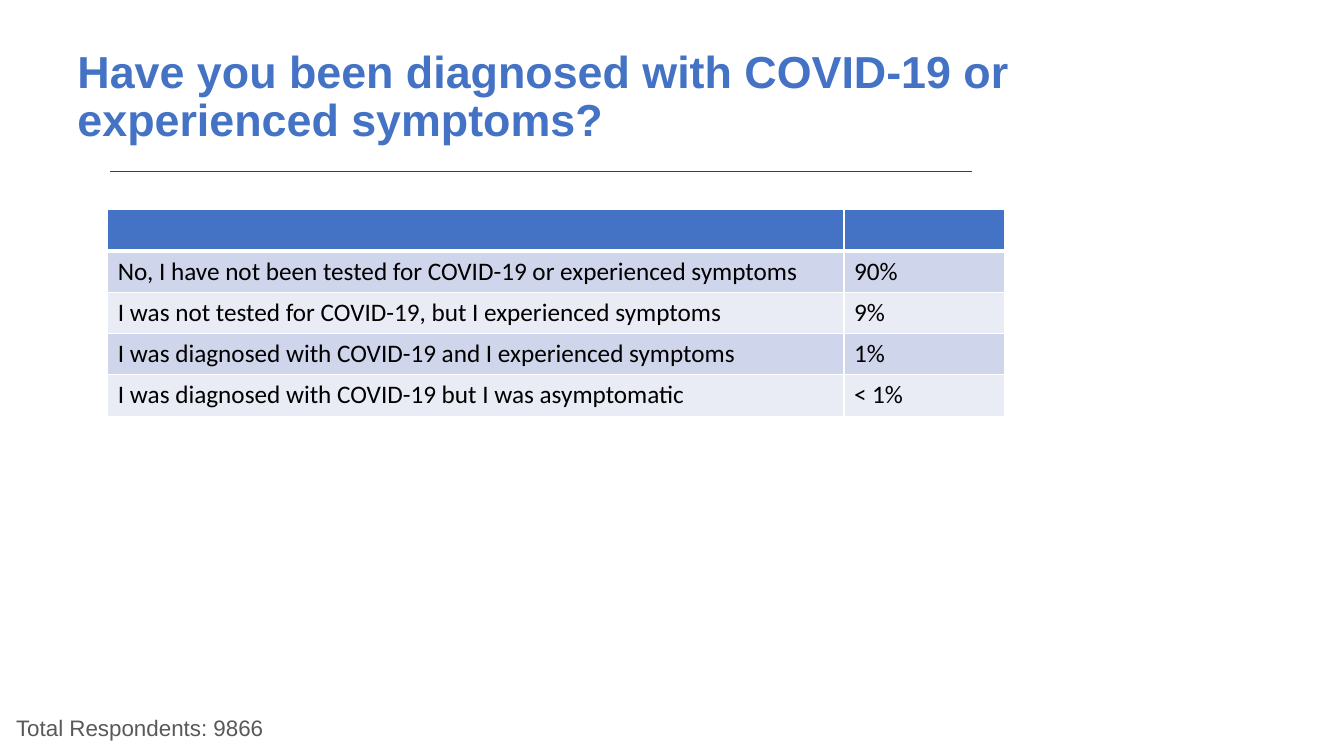
from lxml import etree
from pptx import Presentation
from pptx.dml.color import RGBColor
from pptx.enum.shapes import MSO_CONNECTOR
from pptx.enum.text import MSO_ANCHOR
from pptx.oxml.ns import qn
from pptx.util import Inches, Pt

STRAIGHT = MSO_CONNECTOR.STRAIGHT
TOP = MSO_ANCHOR.TOP
MIDDLE = MSO_ANCHOR.MIDDLE

BLUE = RGBColor(0x44, 0x72, 0xC4)
GREY = RGBColor(0x59, 0x59, 0x59)
RULE_GREY = RGBColor(0x40, 0x40, 0x40)
BLACK = RGBColor(0, 0, 0)
WHITE = RGBColor(0xFF, 0xFF, 0xFF)
BANDS = (RGBColor(0xCF, 0xD5, 0xEA), RGBColor(0xE9, 0xEB, 0xF5))

COLUMN_WIDTHS = (7.3, 1.59)
ROW_HEIGHT = 0.41
ANSWERS = (
    ("No, I have not been tested for COVID-19 or experienced symptoms", "90%"),
    ("I was not tested for COVID-19, but I experienced symptoms", "9%"),
    ("I was diagnosed with COVID-19 and I experienced symptoms", "1%"),
    ("I was diagnosed with COVID-19 but I was asymptomatic", "< 1%"),
)


def style_text(paragraph, font_name, size, color, bold=False):
    """Format every run of a paragraph."""
    for run in paragraph.runs:
        run.font.name = font_name
        run.font.size = Pt(size)
        run.font.color.rgb = color
        run.font.bold = bold


def add_label(slide, box, text, size, color, bold=False, anchor=TOP, inset=0.1):
    """Place a wrapped Arial text in the box."""
    label = slide.shapes.add_textbox(*map(Inches, box)).text_frame
    label.word_wrap = True
    label.vertical_anchor = anchor
    label.margin_left = Inches(inset)
    label.text = text
    label.paragraphs[0].line_spacing = 0.9
    style_text(label.paragraphs[0], "Arial", size, color, bold)


def add_rule(slide, left, top, width):
    """Draw the thin horizontal rule under the title."""
    rule = slide.shapes.add_connector(
        STRAIGHT, Inches(left), Inches(top), Inches(left + width), Inches(top))
    rule.line.color.rgb = RULE_GREY
    rule.line.width = Pt(0.5)
    etree.SubElement(rule._element.spPr, qn("a:effectLst"))


def style_cell(cell, fill, bottom_width):
    """Give a cell white borders and a solid fill."""
    properties = cell._tc.get_or_add_tcPr()
    for side, width in (("L", 1), ("R", 1), ("T", 1), ("B", bottom_width)):
        border = etree.SubElement(properties, qn(f"a:ln{side}"), w=str(Pt(width)))
        solid = etree.SubElement(border, qn("a:solidFill"))
        etree.SubElement(solid, qn("a:srgbClr"), val=str(WHITE))
    cell.fill.solid()
    cell.fill.fore_color.rgb = fill


def add_answers(slide, left, top):
    """Build the table of answers with its empty header row."""
    row_count = len(ANSWERS) + 1
    answers = slide.shapes.add_table(
        row_count, len(COLUMN_WIDTHS), Inches(left), Inches(top),
        Inches(sum(COLUMN_WIDTHS)), Inches(ROW_HEIGHT * row_count)).table
    for column, width in zip(answers.columns, COLUMN_WIDTHS):
        column.width = Inches(width)
    for header in answers.rows[0].cells:
        style_cell(header, BLUE, 3)
    for index, answer in enumerate(ANSWERS):
        for cell, text in zip(answers.rows[index + 1].cells, answer):
            cell.text = text
            style_text(cell.text_frame.paragraphs[0], "Calibri", 18, BLACK)
            style_cell(cell, BANDS[index % 2], 1)


def main():
    """Build and save the survey slide."""
    deck = Presentation()
    deck.slide_width = Inches(13.33)
    deck.slide_height = Inches(7.5)
    slide = deck.slides.add_slide(deck.slide_layouts[6])
    add_rule(slide, 1.09, 1.7, 8.55)
    add_label(slide, (0.67, 0.68, 12, 0.58),
              "Have you been diagnosed with COVID-19 or experienced symptoms?",
              32, BLUE, bold=True, anchor=MIDDLE)
    add_label(slide, (0, 7.07, 12, 0.42), "Total Respondents: 9866",
              16, GREY, inset=0.16)
    add_answers(slide, 1.07, 2.08)
    deck.save("out.pptx")


if __name__ == "__main__":
    main()
